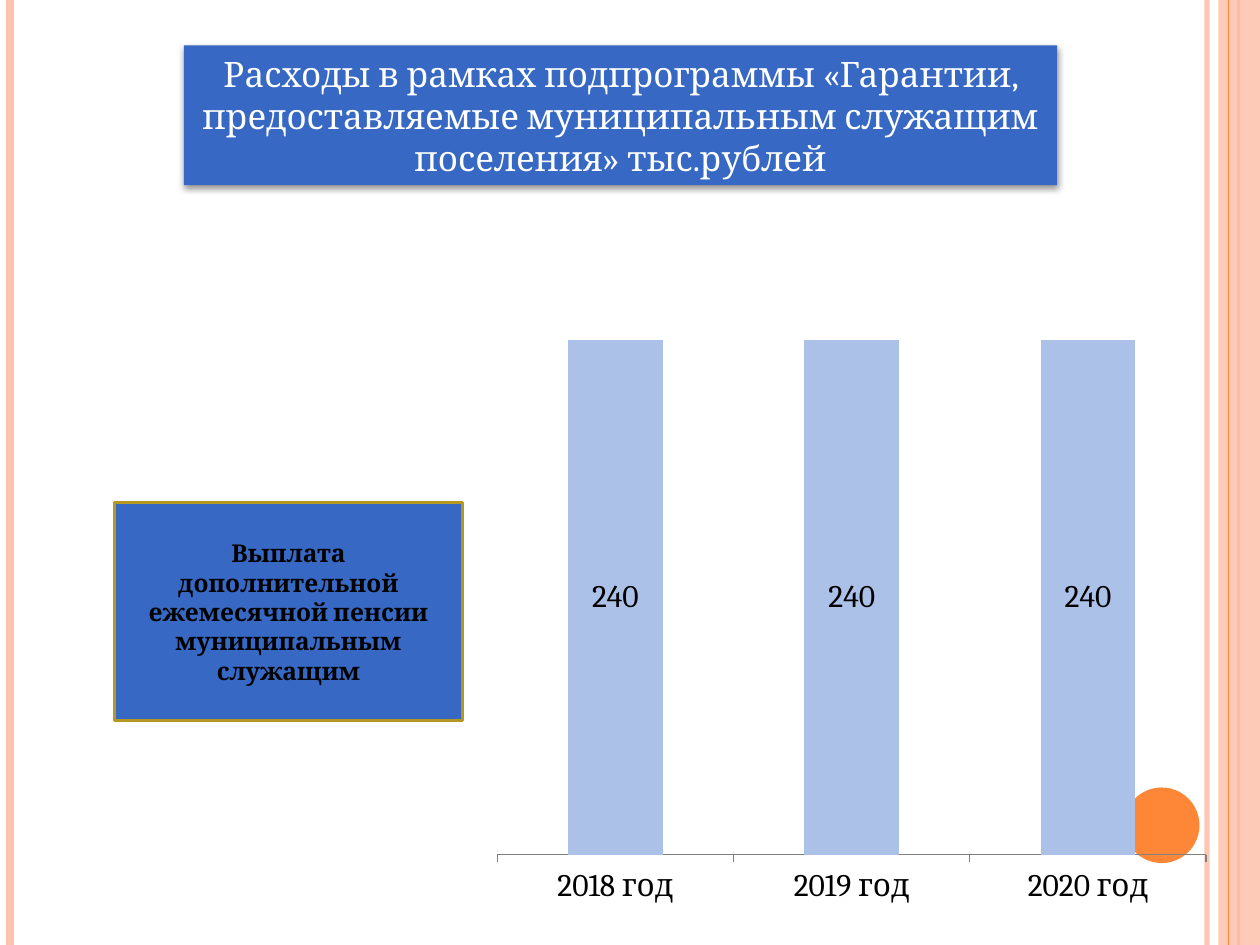
from dataclasses import dataclass
from typing import Optional

from lxml import etree
from pptx import Presentation
from pptx import util as u
from pptx.chart.data import CategoryChartData
from pptx.dml.color import RGBColor
from pptx.enum import chart as charts, shapes, text
from pptx.oxml import parse_xml
from pptx.oxml.ns import nsdecls, qn


@dataclass(frozen=True)
class Theme:
    font: str = "Cambria"
    blue: str = "3668C4"
    bar: str = "ACC1E8"
    gold: str = "B59821"
    orange: str = "FE8637"
    peach: str = "FEC3AE"
    axis: str = "808080"
    white: str = "FFFFFF"
    black: str = "000000"
    title_size: int = 20
    chart_size: int = 18
    body_size: int = 14


@dataclass(frozen=True)
class Stripe:
    x: float
    color: str
    weight: float
    opacity: int = 100


@dataclass(frozen=True)
class Panel:
    left: float
    top: float
    width: float
    height: float
    fill: str
    kind: int = shapes.MSO_SHAPE.RECTANGLE
    opacity: int = 100
    outline: Optional[str] = None


THEME = Theme()
WIDTH, HEIGHT = 10, 7.5

LEFT_STRIPES = [
    Stripe(9.58, THEME.peach, 3, 93),
    Stripe(0.08, THEME.peach, 4.5),
    Stripe(9.83, THEME.orange, 1.5),
]
INNER_STRIPE = Stripe(9.75, THEME.orange, 0.75)
EDGE_BAND = Panel(9.67, 0, 0.33, HEIGHT, THEME.peach, opacity=87)
CIRCLE = Panel(8.92, 6.25, 0.6, 0.6, THEME.orange, shapes.MSO_SHAPE.OVAL)
TITLE = Panel(1.46, 0.36, 6.93, 1.11, THEME.blue)
CAPTION = Panel(0.91, 3.99, 2.76, 1.73, THEME.blue, outline=THEME.gold)


def rgb(color: str) -> RGBColor:
    return RGBColor.from_string(color)


def set_opacity(element, opacity: int) -> None:
    if opacity < 100:
        color = element.find(".//" + qn("a:srgbClr"))
        etree.SubElement(color, qn("a:alpha")).set("val", str(opacity * 1000))


def draw_stripe(page, stripe: Stripe) -> None:
    x = u.Inches(stripe.x)
    line = page.shapes.add_connector(
        shapes.MSO_CONNECTOR.STRAIGHT, x, 0, x, u.Inches(HEIGHT))
    line.line.color.rgb = rgb(stripe.color)
    line.line.width = u.Pt(stripe.weight)
    properties = line._element.spPr
    set_opacity(properties, stripe.opacity)
    etree.SubElement(properties, qn("a:effectLst"))


def draw_panel(page, panel: Panel):
    box = page.shapes.add_shape(
        panel.kind, u.Inches(panel.left), u.Inches(panel.top),
        u.Inches(panel.width), u.Inches(panel.height))
    box.shadow.inherit = False
    box.fill.solid()
    box.fill.fore_color.rgb = rgb(panel.fill)
    set_opacity(box._element.spPr, panel.opacity)
    if panel.outline:
        box.line.color.rgb = rgb(panel.outline)
        box.line.width = u.Pt(2)
    else:
        box.line.fill.background()
    return box


def style_font(font, size: int, color: str, bold: bool = False) -> None:
    font.name = THEME.font
    font.size = u.Pt(size)
    font.color.rgb = rgb(color)
    font.bold = bold


def write(box, words: str, size: int, color: str, bold: bool = False) -> None:
    frame = box.text_frame
    frame.text = words
    frame.word_wrap = True
    frame.vertical_anchor = text.MSO_ANCHOR.MIDDLE
    para = frame.paragraphs[0]
    para.alignment = text.PP_ALIGN.CENTER
    style_font(para.runs[0].font, size, color, bold)


def add_soft_shadow(box) -> None:
    effects = box._element.spPr.find(qn("a:effectLst"))
    effects.append(parse_xml(
        f'<a:outerShdw {nsdecls("a")} blurRad="{u.Pt(4)}" dist="{u.Pt(1.6)}" '
        f'dir="5400000" rotWithShape="0"><a:srgbClr val="{THEME.black}">'
        '<a:alpha val="42000"/></a:srgbClr></a:outerShdw>'))


def draw_chart(page) -> None:
    data = CategoryChartData()
    data.categories = [f"{year} год" for year in range(2018, 2021)]
    data.add_series("Series 1", [240, 240, 240])
    chart = page.shapes.add_chart(
        charts.XL_CHART_TYPE.COLUMN_STACKED, u.Inches(3.83), u.Inches(1.56),
        u.Inches(5.86), u.Inches(5.73), data).chart
    chart.has_title = False
    chart.has_legend = False
    style_font(chart.font, THEME.chart_size, THEME.black)

    values = chart.value_axis
    values.minimum_scale, values.maximum_scale = 0, 300
    values.has_major_gridlines = False
    values.visible = False
    years = chart.category_axis
    years.major_tick_mark = charts.XL_TICK_MARK.OUTSIDE
    years.format.line.color.rgb = rgb(THEME.axis)

    plot = chart.plots[0]
    plot.vary_by_categories = False
    plot.gap_width = 150
    plot.overlap = 100
    series = plot.series[0]
    series.format.fill.solid()
    series.format.fill.fore_color.rgb = rgb(THEME.bar)
    labels = series.data_labels
    labels.show_value = True
    labels.position = charts.XL_LABEL_POSITION.CENTER
    style_font(labels.font, THEME.chart_size, THEME.black)


def main() -> None:
    deck = Presentation()
    deck.slide_width, deck.slide_height = u.Inches(WIDTH), u.Inches(HEIGHT)
    page = deck.slides.add_slide(deck.slide_layouts[6])

    for stripe in LEFT_STRIPES:
        draw_stripe(page, stripe)
    draw_panel(page, EDGE_BAND)
    draw_stripe(page, INNER_STRIPE)
    draw_panel(page, CIRCLE)

    title = draw_panel(page, TITLE)
    add_soft_shadow(title)
    write(title, "Расходы в рамках подпрограммы «Гарантии, предоставляемые "
          "муниципальным служащим поселения» тыс.рублей",
          THEME.title_size, THEME.white)
    caption = draw_panel(page, CAPTION)
    write(caption, "Выплата дополнительной ежемесячной пенсии "
          "муниципальным служащим", THEME.body_size, THEME.black, bold=True)
    draw_chart(page)
    deck.save("out.pptx")


if __name__ == "__main__":
    main()
